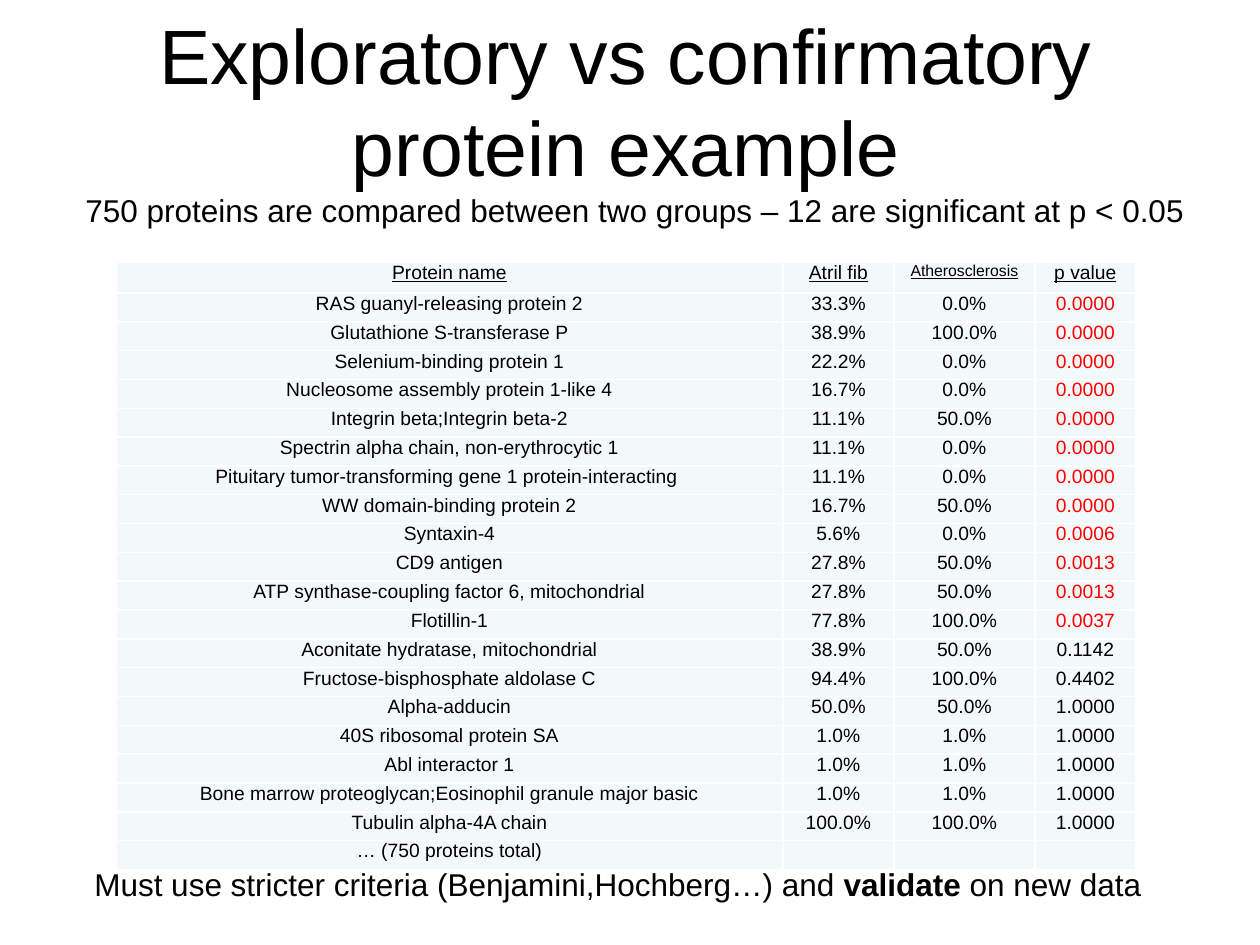
from typing import NamedTuple

from lxml.etree import SubElement
from pptx import Presentation
from pptx.dml.color import RGBColor
from pptx.enum.text import MSO_ANCHOR, MSO_AUTO_SIZE, PP_ALIGN
from pptx.oxml.ns import qn
from pptx.util import Emu, Pt

PX_PER_INCH = 126
FONT = "Arial"
BLACK = RGBColor(0x00, 0x00, 0x00)
RED = RGBColor(0xFF, 0x00, 0x00)
WHITE = RGBColor(0xFF, 0xFF, 0xFF)
CELL_FILL = RGBColor(0xF3, 0xF9, 0xFA)

SIGNIFICANCE_LEVEL = 0.05
TABLE_LEFT, TABLE_TOP = 116, 262
COLUMN_WIDTHS = (667, 111, 141, 101)
HEADER_HEIGHT, BODY_HEIGHT = 31, 577
CELL_INSET = 2


class Span(NamedTuple):
    text: str
    bold: bool = False


class TextBlock(NamedTuple):
    left: int
    top: int
    width: int
    height: int
    spans: tuple[Span, ...]
    size: int = 18
    align: PP_ALIGN = PP_ALIGN.LEFT
    anchor: MSO_ANCHOR = MSO_ANCHOR.TOP
    auto_size: MSO_AUTO_SIZE = MSO_AUTO_SIZE.SHAPE_TO_FIT_TEXT


class Protein(NamedTuple):
    name: str
    atrial_fib: str = ""
    atherosclerosis: str = ""
    p_value: str = ""


TITLE = TextBlock(
    59, 21, 1134, 158, (Span("Exploratory vs confirmatory\nprotein example"),),
    44, PP_ALIGN.CENTER, MSO_ANCHOR.MIDDLE, MSO_AUTO_SIZE.NONE,
)
SUMMARY = TextBlock(
    73, 185, 1124, 50,
    (Span("750 proteins are compared between two groups – 12 are significant at p < 0.05"),),
)
CONCLUSION = TextBlock(
    82, 859, 1094, 50,
    (
        Span("Must use stricter criteria (Benjamini,Hochberg…) and "),
        Span("validate ", bold=True),
        Span("on new data"),
    ),
)

HEADER = Protein("Protein name", "Atril fib", "Atherosclerosis", "p value")
HEADER_SIZES = (11, 11, 9, 11)
BODY_SIZE = 11
PROTEINS = (
    Protein("RAS guanyl-releasing protein 2", "33.3%", "0.0%", "0.0000"),
    Protein("Glutathione S-transferase P", "38.9%", "100.0%", "0.0000"),
    Protein("Selenium-binding protein 1", "22.2%", "0.0%", "0.0000"),
    Protein("Nucleosome assembly protein 1-like 4", "16.7%", "0.0%", "0.0000"),
    Protein("Integrin beta;Integrin beta-2", "11.1%", "50.0%", "0.0000"),
    Protein("Spectrin alpha chain, non-erythrocytic 1", "11.1%", "0.0%", "0.0000"),
    Protein("Pituitary tumor-transforming gene 1 protein-interacting ", "11.1%", "0.0%", "0.0000"),
    Protein("WW domain-binding protein 2", "16.7%", "50.0%", "0.0000"),
    Protein("Syntaxin-4", "5.6%", "0.0%", "0.0006"),
    Protein("CD9 antigen", "27.8%", "50.0%", "0.0013"),
    Protein("ATP synthase-coupling factor 6, mitochondrial", "27.8%", "50.0%", "0.0013"),
    Protein("Flotillin-1", "77.8%", "100.0%", "0.0037"),
    Protein("Aconitate hydratase, mitochondrial", "38.9%", "50.0%", "0.1142"),
    Protein("Fructose-bisphosphate aldolase C", "94.4%", "100.0%", "0.4402"),
    Protein("Alpha-adducin", "50.0%", "50.0%", "1.0000"),
    Protein("40S ribosomal protein SA", "1.0%", "1.0%", "1.0000"),
    Protein("Abl interactor 1", "1.0%", "1.0%", "1.0000"),
    Protein("Bone marrow proteoglycan;Eosinophil granule major basic", "1.0%", "1.0%", "1.0000"),
    Protein("Tubulin alpha-4A chain", "100.0%", "100.0%", "1.0000"),
    Protein("… (750 proteins total)"),
)


def px(length: int) -> Emu:
    return Emu(round(length * 914400 / PX_PER_INCH))


def style_run(run, size: int, color: RGBColor = BLACK) -> None:
    run.font.name = FONT
    run.font.size = Pt(size)
    run.font.color.rgb = color


def add_text(slide, block: TextBlock) -> None:
    box = slide.shapes.add_textbox(px(block.left), px(block.top), px(block.width), px(block.height))
    frame = box.text_frame
    frame.word_wrap = True
    frame.auto_size = block.auto_size
    frame.vertical_anchor = block.anchor
    para = frame.paragraphs[0]
    para.alignment = block.align
    for span in block.spans:
        if "\n" in span.text:
            para.text = span.text
        else:
            run = para.add_run()
            run.text = span.text
            run.font.bold = span.bold
    for run in para.runs:
        style_run(run, block.size)


def add_borders(cell) -> None:
    properties = cell._tc.get_or_add_tcPr()
    for side in ("a:lnL", "a:lnR", "a:lnT", "a:lnB"):
        line = SubElement(properties, qn(side), w=str(Pt(1)))
        fill = SubElement(line, qn("a:solidFill"))
        SubElement(fill, qn("a:srgbClr"), val=str(WHITE))


def fill_cell(cell, text: str, size: int, color: RGBColor, underline: bool) -> None:
    add_borders(cell)
    cell.fill.solid()
    cell.fill.fore_color.rgb = CELL_FILL
    cell.margin_left = cell.margin_right = px(CELL_INSET)
    cell.margin_top = cell.margin_bottom = 0
    para = cell.text_frame.paragraphs[0]
    para.alignment = PP_ALIGN.CENTER
    if text:
        para.text = text
        run = para.runs[0]
        style_run(run, size, color)
        run.font.underline = underline
    else:
        # Keeps an empty cell from growing its row to the default text size.
        SubElement(para._p, qn("a:endParaRPr"), sz=str(size * 100))


def is_significant(p_value: str) -> bool:
    return bool(p_value) and float(p_value) < SIGNIFICANCE_LEVEL


def add_protein_table(slide) -> None:
    table = slide.shapes.add_table(
        len(PROTEINS) + 1, len(COLUMN_WIDTHS),
        px(TABLE_LEFT), px(TABLE_TOP), px(sum(COLUMN_WIDTHS)), px(HEADER_HEIGHT + BODY_HEIGHT),
    ).table
    table.first_row = table.horz_banding = False
    for column, width in zip(table.columns, COLUMN_WIDTHS):
        column.width = px(width)
    for row in table.rows:
        row.height = px(BODY_HEIGHT) // len(PROTEINS)
    table.rows[0].height = px(HEADER_HEIGHT)

    for cell, text, size in zip(table.rows[0].cells, HEADER, HEADER_SIZES):
        fill_cell(cell, text, size, BLACK, underline=True)
    for row_index, protein in enumerate(PROTEINS, start=1):
        p_color = RED if is_significant(protein.p_value) else BLACK
        colors = (BLACK, BLACK, BLACK, p_color)
        for cell, text, color in zip(table.rows[row_index].cells, protein, colors):
            fill_cell(cell, text, BODY_SIZE, color, underline=False)


def main() -> None:
    deck = Presentation()
    deck.slide_width, deck.slide_height = px(1260), px(945)
    slide = deck.slides.add_slide(deck.slide_layouts[6])
    add_text(slide, TITLE)
    add_protein_table(slide)
    add_text(slide, SUMMARY)
    add_text(slide, CONCLUSION)
    deck.save("out.pptx")


if __name__ == "__main__":
    main()
